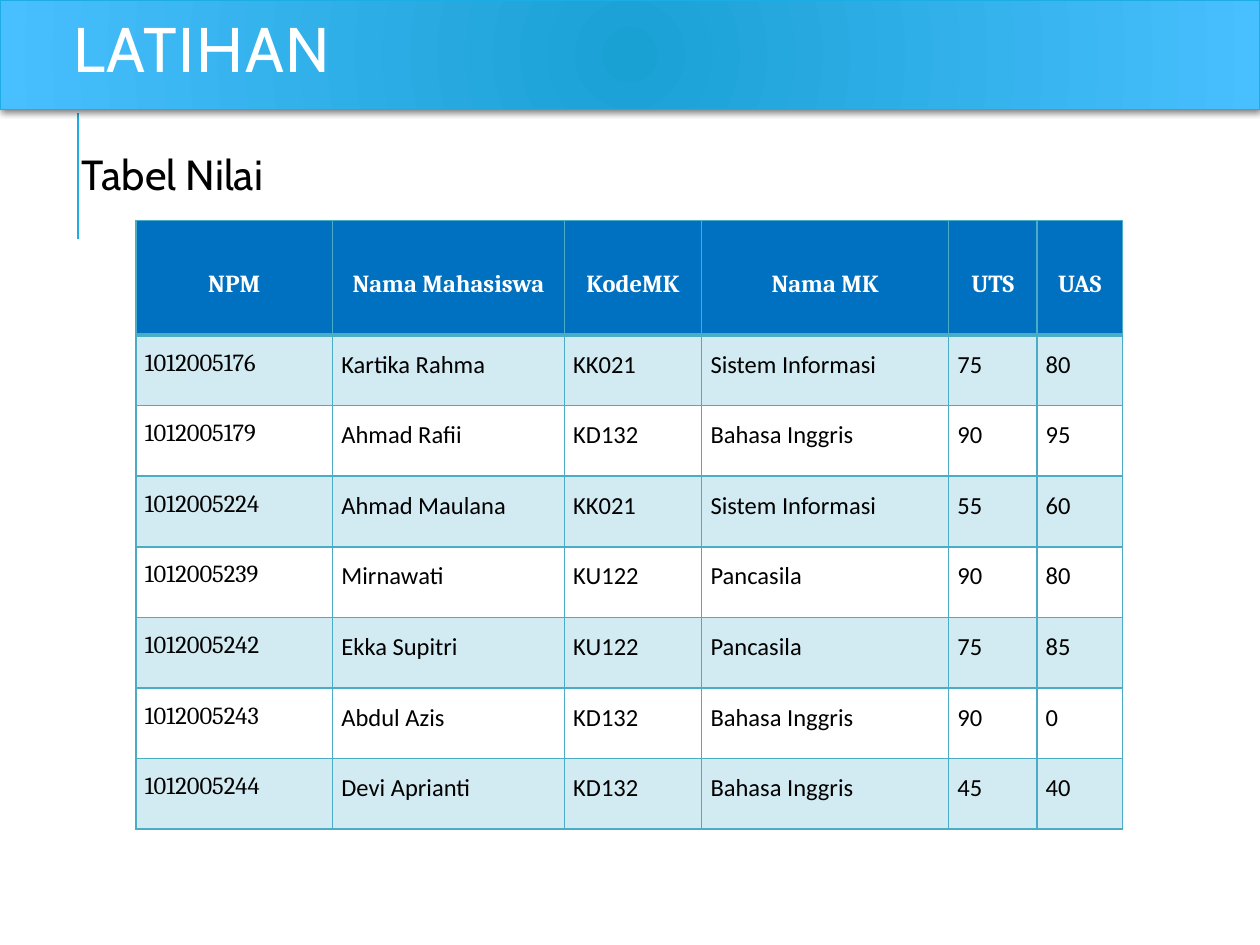
from lxml import etree
from pptx import Presentation
from pptx.dml.color import RGBColor
from pptx.enum import shapes, text
from pptx.oxml import parse_xml
from pptx.oxml.ns import nsdecls, qn
from pptx.util import Inches, Pt

COLORS = {
    "accent": "1CADE4", "glow": "1AA1D4", "edge": "48BFFF",
    "header": "0070C0", "band": "D2EAF1", "grid": "4BACC6",
    "white": "FFFFFF", "black": "000000",
}
HEADINGS = ["NPM", "Nama Mahasiswa", "KodeMK", "Nama MK", "UTS", "UAS"]
COURSES = {"KK021": "Sistem Informasi", "KD132": "Bahasa Inggris", "KU122": "Pancasila"}
GRADES = [
    ("1012005176", "Kartika Rahma", "KK021", "75", "80"),
    ("1012005179", "Ahmad Rafii", "KD132", "90", "95"),
    ("1012005224", "Ahmad Maulana", "KK021", "55", "60"),
    ("1012005239", "Mirnawati", "KU122", "90", "80"),
    ("1012005242", "Ekka Supitri", "KU122", "75", "85"),
    ("1012005243", "Abdul Azis", "KD132", "90", "0"),
    ("1012005244", "Devi Aprianti", "KD132", "45", "40"),
]
COLUMN_WIDTHS = [1.56, 1.84, 1.09, 1.96, 0.7, 0.68]
HEADER_HEIGHT, ROW_HEIGHT = 0.91, 0.56


def style_text(paragraph, font_name, size, color, bold=False):
    for run in paragraph.runs:
        run.font.name = font_name
        run.font.size = Pt(size)
        run.font.bold = bold
        run.font.color.rgb = RGBColor.from_string(COLORS[color])


def set_borders(cell, top, bottom):
    """Draw the four cell edges; top and bottom widths are in points."""
    for side, width in (("L", 1), ("R", 1), ("T", top), ("B", bottom)):
        cell._tc.get_or_add_tcPr().append(parse_xml(
            f'<a:ln{side} {nsdecls("a")} w="{Pt(width)}"><a:solidFill>'
            f'<a:srgbClr val="{COLORS["grid"]}"/></a:solidFill></a:ln{side}>'))


prs = Presentation()
prs.slide_width, prs.slide_height = Inches(10), Inches(7.5)
slide = prs.slides.add_slide(prs.slide_layouts[1])
title, body = slide.placeholders

# Vertical rule, behind everything else
rule = slide.shapes.add_connector(
    shapes.MSO_CONNECTOR.STRAIGHT, Inches(0.62), Inches(1.9), Inches(0.62), Inches(0.9))
rule.line.color.rgb = RGBColor.from_string(COLORS["accent"])
rule.line.width = Pt(1.5)
etree.SubElement(rule._element.spPr, qn("a:effectLst"))
slide.shapes._spTree.insert(2, rule._element)

# Title band
title.left, title.top, title.width, title.height = 0, 0, Inches(10), Inches(0.87)
title._element.spPr.append(parse_xml(
    f'<a:gradFill {nsdecls("a")}><a:gsLst>'
    f'<a:gs pos="0"><a:srgbClr val="{COLORS["glow"]}"/></a:gs>'
    f'<a:gs pos="100000"><a:srgbClr val="{COLORS["edge"]}"/></a:gs></a:gsLst>'
    '<a:path path="circle"><a:fillToRect l="100000" t="100000" r="100000" b="100000"/>'
    '</a:path></a:gradFill>'))
title.line.color.rgb = RGBColor.from_string(COLORS["accent"])
title.line.width = Pt(0.75)
title._element.spPr.append(parse_xml(
    f'<a:effectLst {nsdecls("a")}><a:outerShdw blurRad="{Pt(4)}" dist="{Pt(1)}" '
    f'dir="5400000" rotWithShape="0"><a:srgbClr val="{COLORS["black"]}">'
    '<a:alpha val="50000"/></a:srgbClr></a:outerShdw></a:effectLst>'))
title_frame = title.text_frame
title_frame.text = "LATIHAN"
title_frame.auto_size = text.MSO_AUTO_SIZE.NONE
title_frame.vertical_anchor = text.MSO_ANCHOR.MIDDLE
title_frame.margin_left = Inches(0.58)
heading = title_frame.paragraphs[0]
heading.alignment = text.PP_ALIGN.LEFT
heading.line_spacing = 0.8
style_text(heading, "Cabin", 36, "white")
heading.runs[0]._r.get_or_add_rPr().set("spc", "100")

# Caption above the table
body.left, body.top, body.width, body.height = map(Inches, (0.5, 1.17, 9, 5.75))
body_frame = body.text_frame
body_frame.text = "Tabel Nilai"
body_frame.auto_size = text.MSO_AUTO_SIZE.NONE
body_frame.margin_left = body_frame.margin_right = Inches(0.05)
body_frame.margin_top = body_frame.margin_bottom = Inches(0.05)
caption = body_frame.paragraphs[0]
caption.line_spacing = 0.9
caption.space_before, caption.space_after = Pt(12), Pt(2)
caption_format = caption._p.get_or_add_pPr()
caption_format.set("marL", str(Inches(0.1)))
caption_format.set("indent", "0")
etree.SubElement(caption_format, qn("a:buNone"))
style_text(caption, "Cabin", 24, "black")

# Grade table
rows = [HEADINGS] + [
    [npm, name, code, COURSES[code], uts, uas] for npm, name, code, uts, uas in GRADES]
grades = slide.shapes.add_table(
    len(rows), len(HEADINGS), Inches(1.08), Inches(1.75), Inches(sum(COLUMN_WIDTHS)),
    Inches(HEADER_HEIGHT + ROW_HEIGHT * len(GRADES))).table
for column, width in zip(grades.columns, COLUMN_WIDTHS):
    column.width = Inches(width)

for r, values in enumerate(rows):
    is_header = r == 0
    grades.rows[r].height = Inches(HEADER_HEIGHT if is_header else ROW_HEIGHT)
    for c, value in enumerate(values):
        cell = grades.cell(r, c)
        cell.text = value
        cell.margin_left = cell.margin_right = Inches(0.07)
        cell.margin_top = cell.margin_bottom = 0
        set_borders(cell, top=2.25 if r == 1 else 1, bottom=2.25 if is_header else 1)
        if is_header or r % 2:
            cell.fill.solid()
            cell.fill.fore_color.rgb = RGBColor.from_string(
                COLORS["header" if is_header else "band"])
        else:
            cell.fill.background()
        paragraph = cell.text_frame.paragraphs[0]
        paragraph.line_spacing = 1.5
        if is_header:
            cell.vertical_anchor = text.MSO_ANCHOR.MIDDLE
            paragraph.alignment = text.PP_ALIGN.CENTER
        style_text(paragraph, "Cambria" if is_header or c == 0 else "Calibri", 14,
                   "white" if is_header else "black", bold=is_header)

prs.save("out.pptx")
